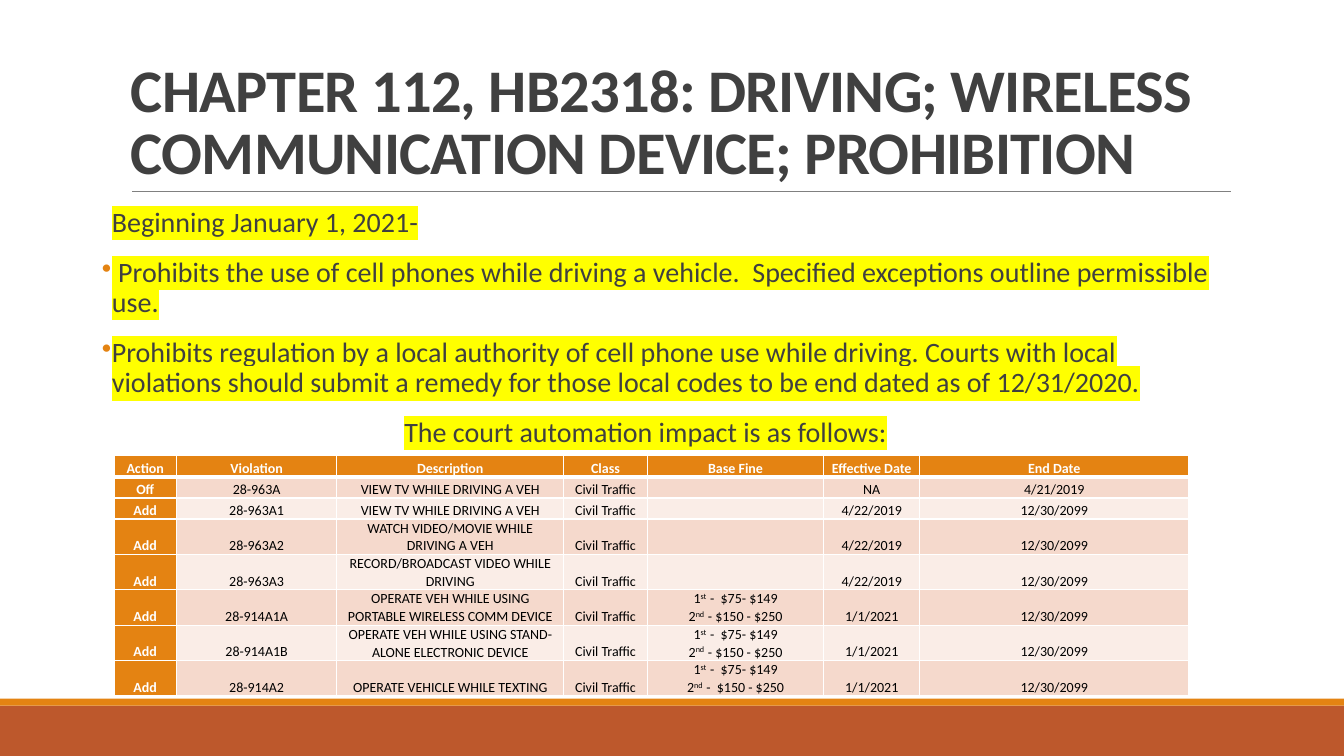
from lxml.etree import SubElement
from pptx import Presentation
from pptx.dml.color import RGBColor
from pptx.enum.shapes import MSO_CONNECTOR, MSO_SHAPE
from pptx.enum.text import MSO_ANCHOR, PP_ALIGN
from pptx.oxml.ns import qn
from pptx.util import Inches, Pt

WHITE = RGBColor(0xFF, 0xFF, 0xFF)
BLACK = RGBColor(0x00, 0x00, 0x00)
CHARCOAL = RGBColor(0x40, 0x40, 0x40)
GREY = RGBColor(0x80, 0x80, 0x80)
ORANGE = RGBColor(0xE4, 0x83, 0x12)
RUST = RGBColor(0xBD, 0x58, 0x2C)
PEACH = RGBColor(0xF5, 0xD9, 0xCC)
CREAM = RGBColor(0xFA, 0xED, 0xE7)
YELLOW = RGBColor(0xFF, 0xFF, 0x00)

TITLE = "CHAPTER 112, HB2318: DRIVING; WIRELESS COMMUNICATION DEVICE; PROHIBITION"
PROVISIONS = [
    ("Beginning January 1, 2021-", 0.1, False),
    (" Prohibits the use of cell phones while driving a vehicle.  Specified exceptions outline permissible use.",
     0.1, True),
    ("Prohibits regulation by a local authority of cell phone use while driving. Courts with local violations "
     "should submit a remedy for those local codes to be end dated as of 12/31/2020.", 0.1, True),
    ("The court automation impact is as follows:", 3, False),
]
FIRST_FINE = "1^st  ^-  $75- $149"
FINES = FIRST_FINE + "\n2^nd  ^- $150 - $250"
TEXTING_FINES = FIRST_FINE + "\n2^nd  ^-  $150 - $250"
CLASS = "Civil Traffic"
END = "12/30/2099"
VIOLATIONS = [
    ("Action", "Violation", "Description", "Class", "Base Fine", "Effective Date", "End Date"),
    ("Off", "28-963A", "VIEW TV WHILE DRIVING A VEH", CLASS, "", "NA", "4/21/2019"),
    ("Add", "28-963A1", "VIEW TV WHILE DRIVING A VEH", CLASS, "", "4/22/2019", END),
    ("Add", "28-963A2", "WATCH VIDEO/MOVIE WHILE DRIVING A VEH", CLASS, "", "4/22/2019", END),
    ("Add", "28-963A3", "RECORD/BROADCAST VIDEO WHILE DRIVING", CLASS, "", "4/22/2019", END),
    ("Add", "28-914A1A", "OPERATE VEH WHILE USING PORTABLE WIRELESS COMM DEVICE", CLASS, FINES, "1/1/2021", END),
    ("Add", "28-914A1B", "OPERATE VEH WHILE USING STAND-ALONE ELECTRONIC DEVICE", CLASS, FINES, "1/1/2021", END),
    ("Add", "28-914A2", "OPERATE VEHICLE WHILE TEXTING", CLASS, TEXTING_FINES, "1/1/2021", END),
]
COLUMN_SHARES = (4.65, 11.93, 16.88, 6.23, 13.13, 7.13, 20.03)
ROW_SHARE = 2.8
PADDED_COLUMNS = (1, 2, 3)


class BillSlide:
    """Draws styled elements on one slide, placed in percent of its width and height."""

    def __init__(self, deck, font="Calibri"):
        self.width, self.height = deck.slide_width, deck.slide_height
        self.slide = deck.slides.add_slide(deck.slide_layouts[6])
        self.font = font

    def across(self, share):
        return round(self.width * share / 100)

    def down(self, share):
        return round(self.height * share / 100)

    def place(self, left, top, width, height):
        return self.across(left), self.down(top), self.across(width), self.down(height)

    def band(self, top, height, color):
        band = self.slide.shapes.add_shape(MSO_SHAPE.RECTANGLE, *self.place(0, top, 100, height))
        band.shadow.inherit = False
        band.fill.solid()
        band.fill.fore_color.rgb = color
        band.line.fill.background()

    def rule(self, left, right, height):
        rule = self.slide.shapes.add_connector(
            MSO_CONNECTOR.STRAIGHT, self.across(left), self.down(height), self.across(right), self.down(height))
        rule.line.color.rgb = GREY
        rule.line.width = Pt(0.5)
        SubElement(rule.element.spPr, qn("a:effectLst"))

    def style(self, paragraph, size, color, spacing, bold=False):
        paragraph.line_spacing = spacing
        paragraph.font.name = self.font
        paragraph.font.size = Pt(size)
        paragraph.font.color.rgb = color
        paragraph.font.bold = bold

    def frame(self, area, anchor):
        frame = self.slide.shapes.add_textbox(*self.place(*area)).text_frame
        frame.word_wrap = True
        frame.vertical_anchor = anchor
        return frame

    def title(self, text, area):
        heading = self.frame(area, MSO_ANCHOR.BOTTOM).paragraphs[0]
        run = heading.add_run()
        run.text = text
        run.font._element.set("spc", "-50")
        self.style(heading, 43.2, CHARCOAL, 0.85, True)

    def provisions(self, items, area):
        frame = self.frame(area, MSO_ANCHOR.TOP)
        frame.margin_left = frame.margin_right = 0
        for index, (text, indent, bulleted) in enumerate(items):
            provision = frame.add_paragraph() if index else frame.paragraphs[0]
            provision.space_before, provision.space_after = Pt(12), Pt(2)
            run = provision.add_run()
            run.text = text
            highlight = SubElement(run.font._element, qn("a:highlight"))
            SubElement(highlight, qn("a:srgbClr"), val=str(YELLOW))
            properties = provision._p.get_or_add_pPr()
            properties.set("marL", str(Inches(indent)))
            if bulleted:
                properties.set("indent", str(-Inches(indent)))
                bullet_color = SubElement(properties, qn("a:buClr"))
                SubElement(bullet_color, qn("a:srgbClr"), val=str(ORANGE))
                SubElement(properties, qn("a:buChar"), char="•")
            self.style(provision, 20, CHARCOAL, 0.9)

    def borders(self, cell, bottom):
        properties = cell._tc.get_or_add_tcPr()
        for index, (side, points) in enumerate((("lnL", 1), ("lnR", 1), ("lnT", 1), ("lnB", bottom))):
            edge = properties.makeelement(qn("a:" + side), {"w": str(Pt(points))})
            SubElement(SubElement(edge, qn("a:solidFill")), qn("a:srgbClr"), val=str(WHITE))
            properties.insert(index, edge)

    def cell(self, cell, text, row, column):
        heading = row == 0 or column == 0
        cell.fill.solid()
        cell.fill.fore_color.rgb = ORANGE if heading else PEACH if row % 2 else CREAM
        cell.vertical_anchor = MSO_ANCHOR.BOTTOM
        cell.margin_top = cell.margin_bottom = 0
        cell.margin_left = cell.margin_right = Pt(5 if column in PADDED_COLUMNS else 0)
        self.borders(cell, 1 if row else 3)
        for index, line in enumerate(text.split("\n")):
            entry = cell.text_frame.add_paragraph() if index else cell.text_frame.paragraphs[0]
            entry.alignment = PP_ALIGN.CENTER
            self.style(entry, 10, WHITE if heading else BLACK, 1.05 if row > 1 else 1.15, heading)
            if not line:
                SubElement(entry._p, qn("a:endParaRPr"), sz="1000")
                continue
            for part, piece in enumerate(line.split("^")):
                run = entry.add_run()
                run.text = piece
                if part % 2:
                    run.font._element.set("baseline", "30000")

    def table(self, rows, left, top):
        area = self.place(left, top, sum(COLUMN_SHARES), ROW_SHARE * len(rows))
        table = self.slide.shapes.add_table(len(rows), len(COLUMN_SHARES), *area).table
        table.horz_banding = False
        for column, share in zip(table.columns, COLUMN_SHARES):
            column.width = self.across(share)
        for row, texts in enumerate(rows):
            table.rows[row].height = self.down(ROW_SHARE)
            for column, text in enumerate(texts):
                self.cell(table.cell(row, column), text, row, column)


def main():
    deck = Presentation()
    deck.slide_width, deck.slide_height = Inches(13.33), Inches(7.5)
    bill = BillSlide(deck)
    bill.band(93.33, 6.67, RUST)
    bill.band(92.4, 0.93, ORANGE)
    bill.rule(9.83, 91.6, 25.33)
    bill.title(TITLE, (9, 4.13, 82.52, 21.2))
    bill.provisions(PROVISIONS, (7.58, 26.93, 83.95, 64.53))
    bill.table(VIOLATIONS, 8.48, 60.27)
    deck.save("out.pptx")


if __name__ == "__main__":
    main()
